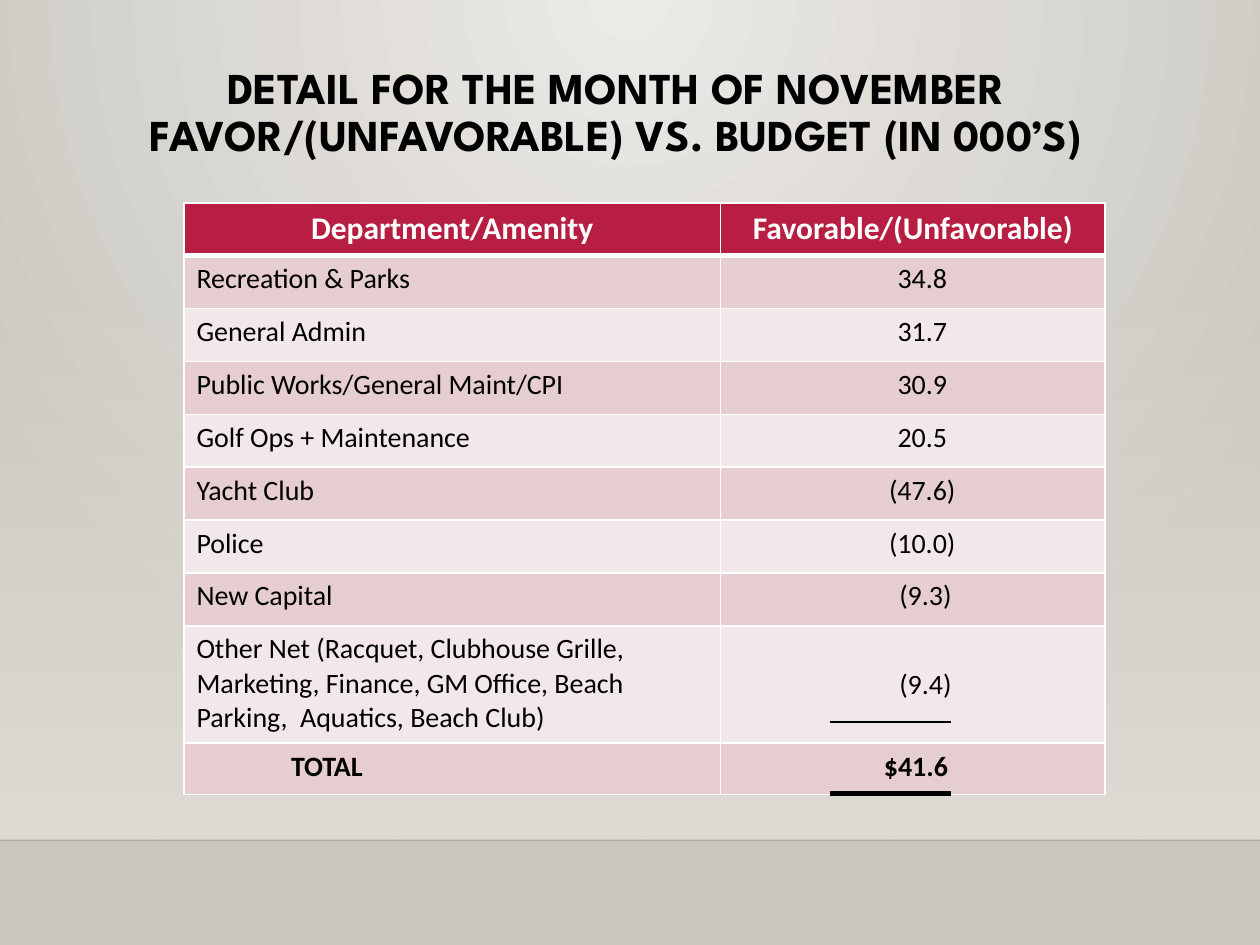
import dataclasses
import lxml.etree
import pptx
import pptx.dml.color
import pptx.enum.shapes
import pptx.enum.text
import pptx.oxml.ns
import pptx.util

Inches = pptx.util.Inches
Pt = pptx.util.Pt
RGB = pptx.dml.color.RGBColor.from_string
qn = pptx.oxml.ns.qn
ALIGN = pptx.enum.text.PP_ALIGN
ANCHOR = pptx.enum.text.MSO_ANCHOR


@dataclasses.dataclass
class Theme:
    glow: str = "ECEAE7"
    stone: str = "CAC7C1"
    sand: str = "DFDBD5"
    red: str = "B71E42"
    bands: tuple = ("E6CDCF", "F3E8E9")
    ink: str = "000000"
    white: str = "FFFFFF"
    title: float = 25.2
    head: int = 18
    body: int = 16
    display: str = "League Spartan"
    sans: str = "Calibri"


THEME = Theme()

ROWS = [
    ("Recreation & Parks", "34.8", 0.15),
    ("General Admin", "31.7", 0.15),
    ("Public Works/General Maint/CPI", "30.9", 0.15),
    ("Golf Ops + Maintenance", "20.5", 0.15),
    ("Yacht Club", "(47.6)", 0.15),
    ("Police", "(10.0)", 0.15),
    ("New Capital", "(9.3)", 0.2),
    ("Other Net (Racquet, Clubhouse Grille, Marketing, Finance, "
     "GM Office, Beach Parking,  Aquatics, Beach Club)", "(9.4)", 0.2),
    ("TOTAL", "$41.6", 0.05),
]


def add(parent, tag, **attrs):
    return lxml.etree.SubElement(parent, qn(tag), attrs)


def fade(color, amount):
    add(color, "a:alpha", val=str(amount * 1000))


def blend(fill, *colors):
    fill.gradient()
    for stop, color in zip(fill.gradient_stops, colors):
        stop.color.rgb = RGB(color)


def style(para, face, size, color, bold=False):
    for run in para.runs:
        font = run.font
        font.name, font.size, font.bold = face, Pt(size), bold
        font.color.rgb = RGB(color)


def rule(slide, left, top, width, weight, color):
    line = slide.shapes.add_connector(
        pptx.enum.shapes.MSO_CONNECTOR.STRAIGHT,
        Inches(left), Inches(top), Inches(left + width), Inches(top))
    line.line.width = Pt(weight)
    line.line.color.rgb = RGB(color)
    add(line._element.spPr, "a:effectLst")
    return line


def draw_back(slide, left, top, width, height):
    fill = slide.background.fill
    blend(fill, THEME.glow, THEME.stone)
    grad = slide._element.find(".//" + qn("a:gradFill"))
    grad.remove(grad.find(qn("a:lin")))
    orbit = add(grad, "a:path", path="circle")
    add(orbit, "a:fillToRect", l="43000", t="0", r="43000", b="100000")

    floor = top + height - 0.83
    wall = slide.shapes.add_shape(
        pptx.enum.shapes.MSO_SHAPE.RECTANGLE,
        Inches(left), Inches(top + 2.2), Inches(width), Inches(floor - top - 2.2))
    wall.shadow.inherit = False
    wall.line.fill.background()
    blend(wall.fill, THEME.sand, THEME.sand)
    wall.fill.gradient_angle = 270
    fade(wall._element.find(".//" + qn("a:srgbClr")), 0)

    edge = rule(slide, left, floor, width, 1, THEME.ink)
    fade(edge._element.find(".//" + qn("a:srgbClr")), 20)


def draw_title(slide, left, top, width, height):
    box = slide.shapes.add_textbox(
        Inches(left), Inches(top), Inches(width), Inches(height))
    frame = box.text_frame
    frame.word_wrap = True
    frame.vertical_anchor = ANCHOR.BOTTOM
    frame.margin_bottom = Inches(0.13)
    frame.text = ("DETAIL FOR THE MONTH OF NOVEMBER\v"
                  "FAVOR/(UNFAVORABLE) VS. BUDGET (IN 000’S)")
    para = frame.paragraphs[0]
    para.alignment = ALIGN.CENTER
    para.line_spacing = 0.9
    style(para, THEME.display, THEME.title, THEME.ink, True)


def frame_cell(cell, above, below):
    props = cell._tc.get_or_add_tcPr()
    sides = (("a:lnL", 1), ("a:lnR", 1), ("a:lnT", above), ("a:lnB", below))
    for spot, (tag, weight) in enumerate(sides):
        line = add(props, tag, w=str(Pt(weight)))
        add(add(line, "a:solidFill"), "a:srgbClr", val=THEME.white)
        props.insert(spot, line)


def put(cell, text, fill, size, color, bold, align, indent=0):
    cell.fill.solid()
    cell.fill.fore_color.rgb = RGB(fill)
    cell.margin_left = Inches(0.1 + indent)
    cell.text_frame.text = text
    para = cell.text_frame.paragraphs[0]
    para.alignment = align
    style(para, THEME.sans, size, color, bold)


def draw_table(slide, left, top, width, height):
    count = len(ROWS) + 1
    table = slide.shapes.add_table(
        count, 2, Inches(left), Inches(top), Inches(width), Inches(height)).table
    table.horz_banding = False
    for col, size in zip(table.columns, (4.26, width - 4.26)):
        col.width = Inches(size)
    for row in table.rows:
        row.height = Inches(0.42)
    table.rows[count - 2].height = Inches(0.93)
    table.rows[count - 1].height = Inches(height - 0.93 - 0.42 * (count - 2))

    heads = ("Department/Amenity", "Favorable/(Unfavorable)")
    for col, text in enumerate(heads):
        put(table.cell(0, col), text, THEME.red, THEME.head,
            THEME.white, True, ALIGN.CENTER)
    for row, (name, value, indent) in enumerate(ROWS, 1):
        fill = THEME.bands[(row - 1) % 2]
        total = name == "TOTAL"
        put(table.cell(row, 0), name, fill, THEME.body, THEME.ink,
            total, ALIGN.LEFT, 0.75 if total else 0)
        put(table.cell(row, 1), value, fill, THEME.body, THEME.ink,
            total, ALIGN.CENTER, indent)
    table.cell(count - 2, 1).vertical_anchor = ANCHOR.MIDDLE
    for row in range(count):
        for col in range(2):
            frame_cell(table.cell(row, col),
                       3 if row == 1 else 1, 3 if row == 0 else 1)

    for drop, weight in ((4.12, 1.25), (4.69, 3)):
        rule(slide, left + 5.13, top + drop, 0.96, weight, THEME.ink)


def main():
    deck = pptx.Presentation()
    deck.slide_width, deck.slide_height = Inches(10), Inches(7.5)
    slide = deck.slides.add_slide(deck.slide_layouts[6])
    draw_back(slide, 0, 0, 10, 7.5)
    draw_title(slide, 0.79, 0.07, 8.2, 1.34)
    draw_table(slide, 1.46, 1.61, 7.31, 4.7)
    deck.save("out.pptx")


if __name__ == "__main__":
    main()
